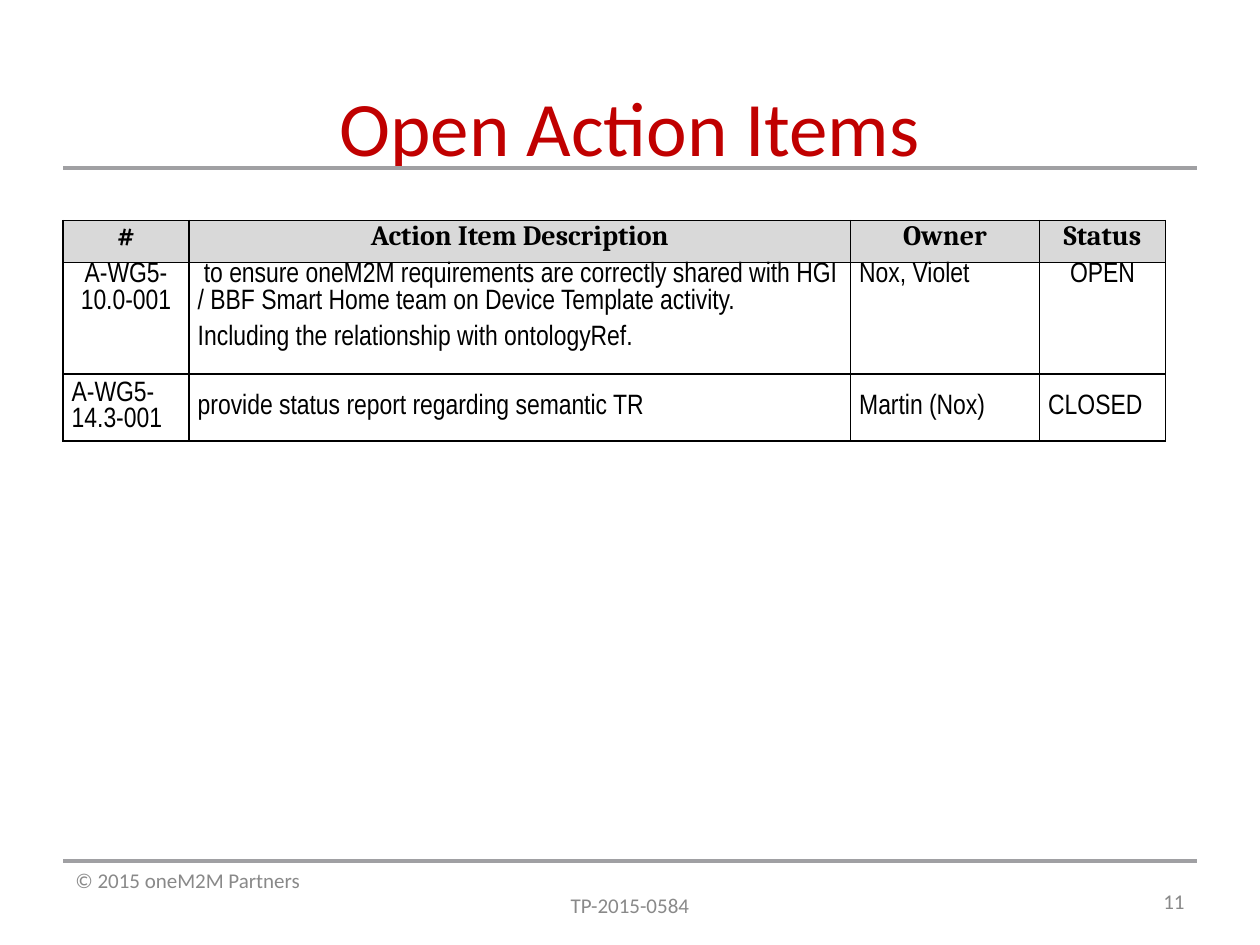
"""Build the slide of open action items."""
from lxml import etree
from pptx import Presentation, util as u
from pptx.dml.color import RGBColor
from pptx.enum import shapes, text
from pptx.oxml.ns import qn

Pt = u.Pt
LEFT, CENTER, RIGHT = text.PP_ALIGN.LEFT, text.PP_ALIGN.CENTER, text.PP_ALIGN.RIGHT
TOP, MIDDLE = text.MSO_ANCHOR.TOP, text.MSO_ANCHOR.MIDDLE

TITLE = "Open Action Items"
FOOTER = [("© 2015 oneM2M Partners", LEFT), ("TP-2015-0584", CENTER)]
NUMBER = [("11", RIGHT)]
ROWS = [
    [["#"], ["Action Item Description"], ["Owner"], ["Status"]],
    [["A-WG5-10.0-001"],
     ["to ensure oneM2M requirements are correctly shared with HGI / BBF Smart Home "
      "team on Device Template activity.",
      "Including the relationship with ontologyRef."],
     ["Nox, Violet"], ["OPEN"]],
    [["A-WG5-14.3-001"], ["provide status report regarding semantic TR"],
     ["Martin (Nox)"], ["CLOSED"]],
]
ALIGN = [[CENTER] * 4, [CENTER, LEFT, LEFT, CENTER], [LEFT] * 4]
ANCHOR = [TOP, TOP, MIDDLE]
COL_WIDTHS = [72, 378, 108, 72]
ROW_HEIGHTS = [24, 51, 31]
LEFT_EDGE, FULL_WIDTH = 36, 648
RULES_Y = [96, 492]
TABLE_TOP = 126
FIRST_INDENT = 3.5

THEME = {
    "title": dict(name="Calibri", size=Pt(44), bold=False, color="C00000"),
    "footer": dict(name="Calibri", size=Pt(12), bold=False, color="898989"),
    "head": dict(name="Cambria", size=Pt(16), bold=True, color="000000"),
    "body": dict(name="Arial Narrow", size=Pt(16), bold=False, color="000000"),
    "rule": "A0A0A3",
    "head_fill": "D9D9D9",
    "border": "000000",
}


def style(p, align, look):
    p.alignment = align
    for r in p.runs:
        for key, value in THEME[look].items():
            if key == "color":
                r.font.color.rgb = RGBColor.from_string(value)
            else:
                setattr(r.font, key, value)


def write(tf, lines, look, gap=0):
    for i, (line, align) in enumerate(lines):
        p = tf.paragraphs[0] if i == 0 else tf.add_paragraph()
        p.add_run().text = line
        p.space_before = Pt(gap if i else 0)
        style(p, align, look)


def add_rule(s, y):
    c = s.shapes.add_connector(shapes.MSO_CONNECTOR.STRAIGHT, Pt(LEFT_EDGE), Pt(y),
                               Pt(LEFT_EDGE + FULL_WIDTH), Pt(y))
    c.line.color.rgb = RGBColor.from_string(THEME["rule"])
    c.line.width = Pt(1.75)
    etree.SubElement(c._element.spPr, qn("a:effectLst"))


def add_text(s, box, lines, anchor):
    tf = s.shapes.add_textbox(*map(Pt, box)).text_frame
    tf.word_wrap = True
    tf.vertical_anchor = anchor
    write(tf, lines, "footer")


def add_borders(cell):
    tc_pr = cell._tc.get_or_add_tcPr()
    for side in ("lnL", "lnR", "lnT", "lnB"):
        ln = etree.SubElement(tc_pr, qn("a:" + side), w=str(Pt(1)))
        fill = etree.SubElement(ln, qn("a:solidFill"))
        etree.SubElement(fill, qn("a:srgbClr"), val=THEME["border"])


def add_actions(s):
    table = s.shapes.add_table(len(ROWS), len(COL_WIDTHS), Pt(LEFT_EDGE), Pt(TABLE_TOP),
                               Pt(sum(COL_WIDTHS)), Pt(sum(ROW_HEIGHTS))).table
    table.first_row = table.horz_banding = False
    for col, width in zip(table.columns, COL_WIDTHS):
        col.width = Pt(width)
    for i, (row, height) in enumerate(zip(table.rows, ROW_HEIGHTS)):
        row.height = Pt(height)
        for cell, lines, align in zip(row.cells, ROWS[i], ALIGN[i]):
            margins = dict(margin_left=5, margin_right=5, margin_top=0, margin_bottom=0)
            for key, value in margins.items():
                setattr(cell, key, Pt(value))
            cell.vertical_anchor = ANCHOR[i]
            add_borders(cell)
            if i == 0:
                cell.fill.solid()
                cell.fill.fore_color.rgb = RGBColor.from_string(THEME["head_fill"])
            else:
                cell.fill.background()
            write(cell.text_frame, [(line, align) for line in lines],
                  "body" if i else "head", 6)
            if i == 0:
                cell.text_frame.paragraphs[0].space_after = Pt(3)
    first = table.cell(1, 1).text_frame.paragraphs[0]
    first._p.get_or_add_pPr().set("indent", str(Pt(FIRST_INDENT)))


def main():
    prs = Presentation()
    prs.slide_width, prs.slide_height = Pt(720), Pt(540)
    s = prs.slides.add_slide(prs.slide_layouts[5])
    for y in RULES_Y:
        add_rule(s, y)
    title = s.shapes.title
    title.left, title.top, title.width, title.height = map(Pt, (LEFT_EDGE, 42, FULL_WIDTH, 90))
    title.text_frame.vertical_anchor = TOP
    write(title.text_frame, [(TITLE, CENTER)], "title")
    add_text(s, (LEFT_EDGE, 492, FULL_WIDTH, 36), FOOTER, TOP)
    add_actions(s)
    add_text(s, (516, 500.5, 168, 29), NUMBER, MIDDLE)
    prs.save("out.pptx")


if __name__ == "__main__":
    main()
